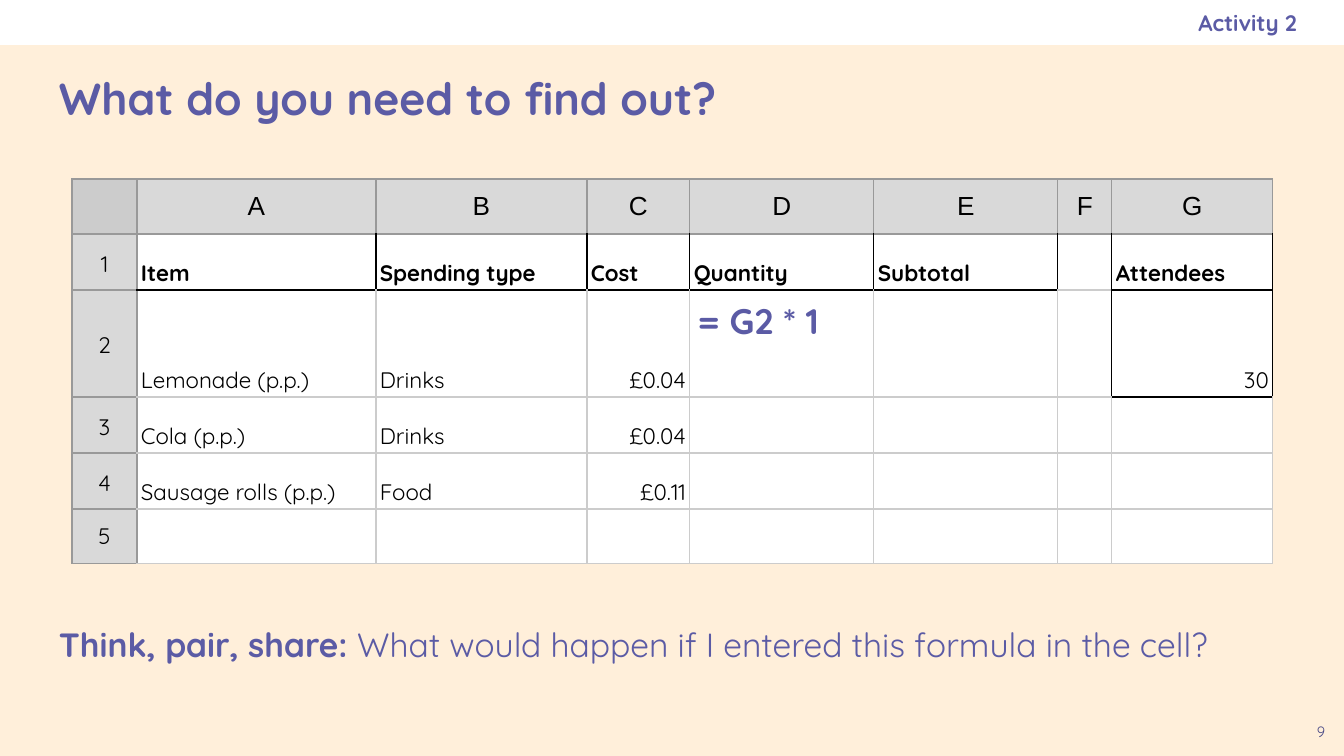
import dataclasses

import pptx
import pptx.dml.color
import pptx.enum.shapes
import pptx.enum.text
import pptx.oxml
import pptx.oxml.ns
import pptx.util

ALIGN = pptx.enum.text.PP_ALIGN
ANCHOR = pptx.enum.text.MSO_ANCHOR
SLIDE_W, SLIDE_H = 1344, 756
SCALE = pptx.util.Inches(10) / SLIDE_W


@dataclasses.dataclass(frozen=True)
class Theme:
    background: str = "FFEFDA"
    white: str = "FFFFFF"
    accent: str = "5B5BA5"
    page: str = "494985"
    ink: str = "000000"
    corner: str = "CCCCCC"
    axis: str = "D9D9D9"
    edges: tuple = ("CCCCCC", "000000", "999999")
    font: str = "Quicksand"
    axis_font: str = "Arial"
    title_size: int = 24
    question_size: int = 18
    formula_size: int = 19
    letter_size: int = 14
    cell_size: int = 12
    page_size: int = 8


THEME = Theme()

COLUMN_WIDTHS = [65, 239, 211, 103, 184, 184, 54, 161]
ROW_HEIGHTS = [55, 56, 107, 56, 56, 55]
HEADINGS_ROW, ATTENDEES_COLUMN, GAP_COLUMN = 1, 7, 6
COST_COLUMN = 3
FORMULA_CELL = (2, 4)
SHEET = [
    ["", "A", "B", "C", "D", "E", "F", "G"],
    ["1", "Item", "Spending type", "Cost", "Quantity", "Subtotal", "", "Attendees"],
    ["2", "Lemonade (p.p.)", "Drinks", "£0.04", "= G2 * 1", "", "", "30"],
    ["3", "Cola (p.p.)", "Drinks", "£0.04", "", "", "", ""],
    ["4", "Sausage rolls (p.p.)", "Food", "£0.11", "", "", "", ""],
    ["5", "", "", "", "", "", "", ""],
]


def px(length):
    return pptx.util.Emu(round(length * SCALE))


def rgb(value):
    return pptx.dml.color.RGBColor.from_string(value)


def paint(fill, color):
    fill.solid()
    fill.fore_color.rgb = rgb(color)


def add_run(paragraph, text, size, color, bold=False, font=THEME.font):
    run = paragraph.add_run()
    run.text = text
    run.font.size = pptx.util.Pt(size)
    run.font.name = font
    run.font.bold = bold
    run.font.color.rgb = rgb(color)


def set_margins(target, left, top, right, bottom):
    target.margin_left, target.margin_top = px(left), px(top)
    target.margin_right, target.margin_bottom = px(right), px(bottom)


def prepare_text(shape, anchor, align, right=13):
    frame = shape.text_frame
    frame.word_wrap = True
    frame.auto_size = pptx.enum.text.MSO_AUTO_SIZE.NONE
    frame.vertical_anchor = anchor
    set_margins(frame, 13, 13, right, 13)
    paragraph = frame.paragraphs[0]
    paragraph.alignment = align
    return paragraph


def add_text(slide, box, anchor, align, right=13):
    return prepare_text(slide.shapes.add_textbox(*map(px, box)), anchor, align, right)


def add_title(slide, text):
    title = slide.shapes.title
    title.left, title.top, title.width, title.height = map(px, (46, 47, 1253, 102))
    paragraph = prepare_text(title, ANCHOR.MIDDLE, ALIGN.LEFT)
    add_run(paragraph, text, THEME.title_size, THEME.accent, True)


def add_top_band(slide):
    band = slide.shapes.add_shape(
        pptx.enum.shapes.MSO_SHAPE.RECTANGLE, 0, 0, px(SLIDE_W), px(45))
    band.shadow.inherit = False
    paint(band.fill, THEME.white)
    band.line.fill.background()


def edge_rank(row, column):
    if not (0 <= row < len(ROW_HEIGHTS) and 0 <= column < len(COLUMN_WIDTHS)):
        return 0
    if row == 0 or column == 0:
        return 2
    heading = row == HEADINGS_ROW and column != GAP_COLUMN
    return int(heading or (row, column) == (2, ATTENDEES_COLUMN))


def draw_borders(cell, row, column):
    properties = cell._tc.get_or_add_tcPr()
    neighbours = {"L": (row, column - 1), "R": (row, column + 1),
                  "T": (row - 1, column), "B": (row + 1, column)}
    for side, neighbour in neighbours.items():
        color = THEME.edges[max(edge_rank(row, column), edge_rank(*neighbour))]
        properties.append(pptx.oxml.parse_xml(
            f'<a:ln{side} {pptx.oxml.ns.nsdecls("a")} w="9525"><a:solidFill>'
            f'<a:srgbClr val="{color}"/></a:solidFill></a:ln{side}>'))


def cell_fill(row, column):
    if row == 0 and column == 0:
        return THEME.corner
    return THEME.axis if row == 0 or column == 0 else THEME.white


def write_cell(cell, row, column, text):
    on_axis = row == 0 or column == 0
    is_formula = (row, column) == FORMULA_CELL
    set_margins(cell, 8 if is_formula else 4, 3, 4, 3)
    cell.vertical_anchor = ANCHOR.MIDDLE if on_axis else ANCHOR.BOTTOM
    if not text:
        return
    paragraph = cell.text_frame.paragraphs[0]
    if 0 < row < 5:
        paragraph.line_spacing = 1.15
    if on_axis:
        paragraph.alignment = ALIGN.CENTER
    elif row > HEADINGS_ROW and column in (COST_COLUMN, ATTENDEES_COLUMN):
        paragraph.alignment = ALIGN.RIGHT
    if row == 0:
        add_run(paragraph, text, THEME.letter_size, THEME.ink, font=THEME.axis_font)
    elif is_formula:
        cell.vertical_anchor = ANCHOR.TOP
        add_run(paragraph, text, THEME.formula_size, THEME.accent, True)
    else:
        bold = row == HEADINGS_ROW and not on_axis
        add_run(paragraph, text, THEME.cell_size, THEME.ink, bold)


def add_spreadsheet(slide):
    frame = slide.shapes.add_table(
        len(SHEET), len(SHEET[0]), px(72), px(179),
        px(sum(COLUMN_WIDTHS)), px(sum(ROW_HEIGHTS)))
    sheet = frame.table
    sheet.first_row = sheet.horz_banding = False
    for column, width in zip(sheet.columns, COLUMN_WIDTHS):
        column.width = px(width)
    for row, height in zip(sheet.rows, ROW_HEIGHTS):
        row.height = px(height)
    for row, texts in enumerate(SHEET):
        for column, text in enumerate(texts):
            cell = sheet.cell(row, column)
            draw_borders(cell, row, column)
            paint(cell.fill, cell_fill(row, column))
            write_cell(cell, row, column, text)


def add_question(slide):
    question = add_text(slide, (46, 605, 1253, 102), ANCHOR.TOP, ALIGN.LEFT)
    question.line_spacing = 1.15
    question.space_after = pptx.util.Pt(16)
    add_run(question, "Think, pair, share: ", THEME.question_size, THEME.accent, True)
    add_run(question, "What would happen if I entered this formula in the cell?",
            THEME.question_size, THEME.accent)


def main():
    deck = pptx.Presentation()
    deck.slide_width, deck.slide_height = px(SLIDE_W), px(SLIDE_H)
    slide = deck.slides.add_slide(deck.slide_layouts[5])
    paint(slide.background.fill, THEME.background)
    add_top_band(slide)
    page = add_text(slide, (1298, 710, 46, 46), ANCHOR.TOP, ALIGN.CENTER)
    add_run(page, "9", THEME.page_size, THEME.page)
    activity = add_text(slide, (773, 0, 524, 46), ANCHOR.MIDDLE, ALIGN.RIGHT, right=0)
    add_run(activity, "Activity 2", THEME.cell_size, THEME.accent, True)
    add_title(slide, "What do you need to find out?")
    add_question(slide)
    add_spreadsheet(slide)
    deck.save("out.pptx")


if __name__ == "__main__":
    main()
